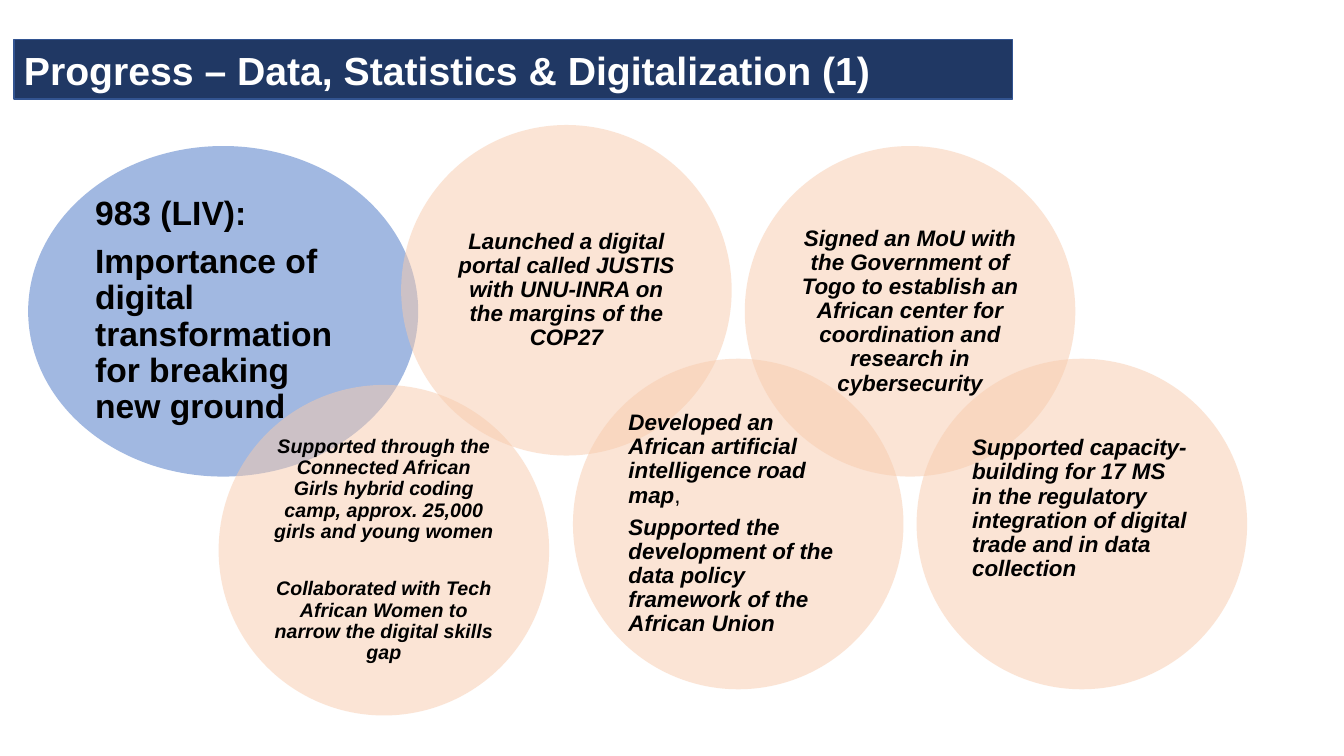
from lxml.etree import SubElement
from pptx import Presentation
from pptx.dml.color import RGBColor
from pptx.enum.shapes import MSO_SHAPE as Shape
from pptx.enum.text import MSO_ANCHOR as Anchor, MSO_AUTO_SIZE as AutoSize, PP_ALIGN as Align
from pptx.oxml.ns import qn
from pptx.util import Cm, Pt

COLORS = {
    "navy": "203864",
    "navy_edge": "325491",
    "blue": "4472C4",
    "peach": "F8CBAD",
    "white": "FFFFFF",
    "black": "000000",
}


def rgb(name):
    return RGBColor.from_string(COLORS[name])


def add_run(paragraph, text, size, color, bold, italic):
    run = paragraph.add_run()
    run.text = text
    run.font.name = "Arial"
    run.font.size = Pt(size)
    run.font.bold = bold
    run.font.italic = italic
    run.font.color.rgb = rgb(color)


deck = Presentation()
deck.slide_width = Cm(33.87)
deck.slide_height = Cm(19.05)
slide = deck.slides.add_slide(deck.slide_layouts[5])

heading = slide.shapes.title
heading.left, heading.top = Cm(0.35), Cm(1)
heading.width, heading.height = Cm(25.17), Cm(1.5)
outline = SubElement(heading._element.spPr, qn("a:prstGeom"), prst="roundRect")
SubElement(outline, qn("a:avLst"))
heading.fill.solid()
heading.fill.fore_color.rgb = rgb("navy")
heading.line.color.rgb = rgb("navy_edge")
heading.line.width = Pt(1)
heading_text = heading.text_frame
heading_text.auto_size = AutoSize.NONE
heading_text.word_wrap = True
heading_text.vertical_anchor = Anchor.MIDDLE
heading_text.paragraphs[0].alignment = Align.LEFT
add_run(heading_text.paragraphs[0], "Progress – Data, Statistics & Digitalization (1)",
        28, "white", True, False)

DIAMETER = 8.33
FIRST_COLUMN, COLUMN_STEP = 10.11, 4.33
columns = [FIRST_COLUMN + COLUMN_STEP * i for i in range(4)]
UPPER, LOWER = 3.68, 9.04

# left, top, width, color, size, italic, alignment, inset, extra bottom inset, paragraph gap, paragraphs
circles = [
    (0.71, UPPER, 9.83, "blue", 24, False, Align.LEFT, 0.25, 0, 8.4,
     [["983 (LIV):"], ["Importance of digital transformation for breaking new ground"]]),
    (5.51, 9.7, DIAMETER, "peach", 14, True, Align.CENTER, 0.15, 0, 26,
     [["Supported through the Connected African Girls hybrid coding camp, "
       "approx. 25,000 girls and young women"],
      ["Collaborated with Tech African Women to narrow the digital skills gap"]]),
    (columns[0], 3.15, DIAMETER, "peach", 16, True, Align.CENTER, 0.18, 0, 5.6,
     [["Launched a digital portal called JUSTIS with UNU-INRA on the margins of the COP27"]]),
    (columns[1], LOWER, DIAMETER, "peach", 16, True, Align.LEFT, 0.18, 0, 5.6,
     [["Developed an African artificial intelligence road map", ","],
      ["Supported the development of the data policy framework of the African Union"]]),
    (columns[2], UPPER, DIAMETER, "peach", 16, True, Align.CENTER, 0.18, 0, 5.6,
     [["Signed an MoU with the Government of Togo to establish an African center "
       "for coordination and research in cybersecurity"]]),
    (columns[3], LOWER, DIAMETER, "peach", 16, True, Align.LEFT, 0.18, 0.76, 5.6,
     [["Supported capacity-building for 17 MS in the regulatory integration "
       "of digital trade and in data collection"]]),
]

for left, top, width, color, size, italic, alignment, inset, lift, gap, statements in circles:
    circle = slide.shapes.add_shape(Shape.OVAL, Cm(left), Cm(top), Cm(width), Cm(DIAMETER))
    circle.shadow.inherit = False
    circle.fill.solid()
    circle.fill.fore_color.rgb = rgb(color)
    fill_color = circle._element.spPr.find(qn("a:solidFill"))[0]
    SubElement(fill_color, qn("a:alpha"), val="50000")
    circle.line.fill.background()

    frame = circle.text_frame
    frame.word_wrap = True
    frame.vertical_anchor = Anchor.MIDDLE
    frame.margin_left = frame.margin_right = frame.margin_top = Cm(inset)
    frame.margin_bottom = Cm(inset + lift)
    for index, pieces in enumerate(statements):
        paragraph = frame.add_paragraph() if index else frame.paragraphs[0]
        paragraph.alignment = alignment
        paragraph.line_spacing = 0.9
        if index:
            paragraph.space_before = Pt(gap)
        for piece in pieces:
            emphasis = piece != ","
            add_run(paragraph, piece, size, "black", emphasis, italic and emphasis)

deck.save("out.pptx")
